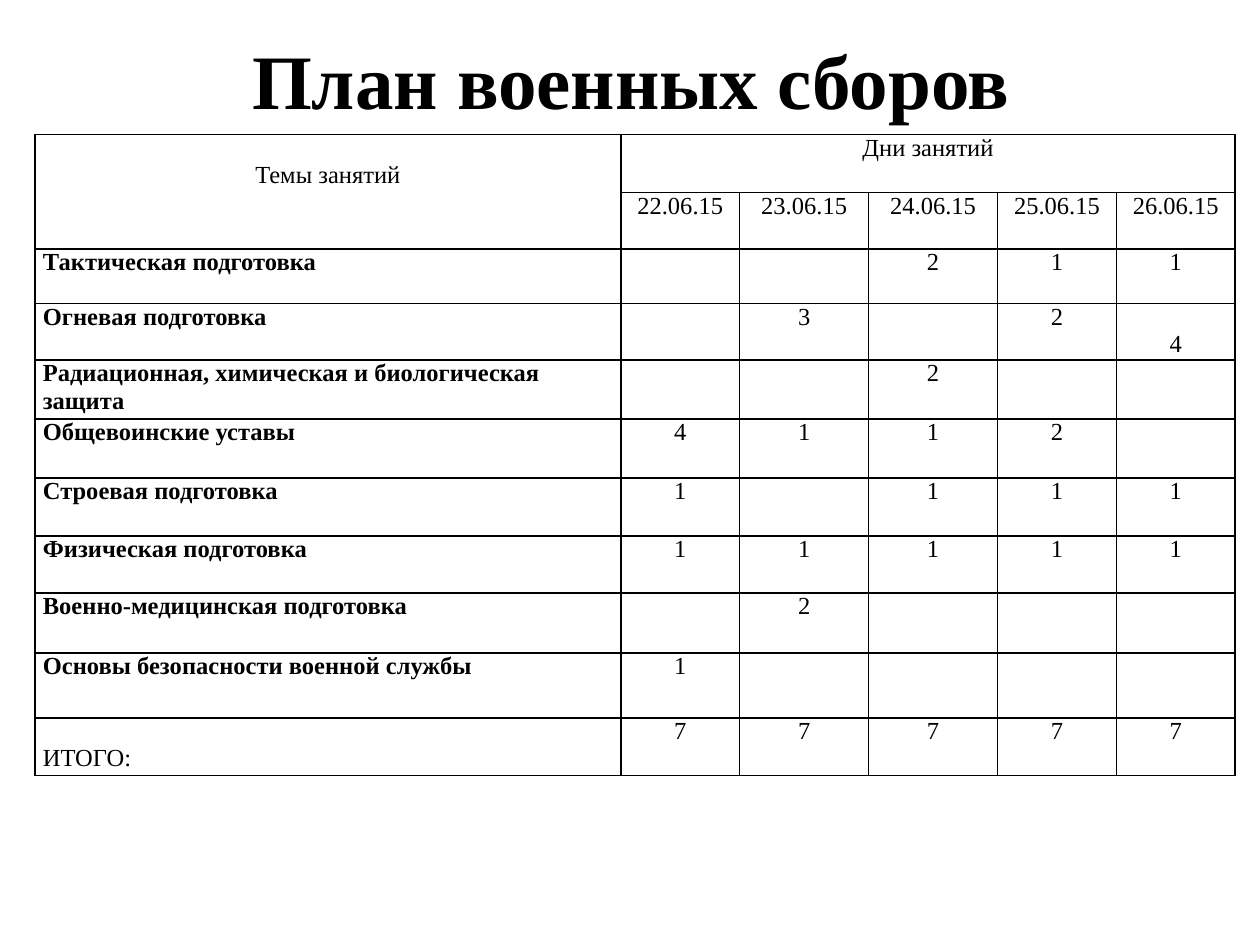
from pptx import Presentation
from pptx.dml.color import RGBColor
from pptx.enum.text import MSO_ANCHOR, PP_ALIGN
from pptx.oxml import parse_xml
from pptx.oxml.ns import nsdecls
from pptx.util import Pt

BLACK = RGBColor(0x00, 0x00, 0x00)
FONT = "Times New Roman"
LINE_HEIGHT = 15.5


def add_text(text_frame, text, size, bold, alignment):
    paragraph = text_frame.paragraphs[0]
    paragraph.alignment = alignment
    run = paragraph.add_run()
    run.text = text
    run.font.name = FONT
    run.font.size = Pt(size)
    run.font.bold = bold
    run.font.color.rgb = BLACK


def add_borders(cell):
    properties = cell._tc.get_or_add_tcPr()
    for index, side in enumerate(("lnL", "lnR", "lnT", "lnB")):
        properties.insert(index, parse_xml(
            f'<a:{side} {nsdecls("a")} w="{Pt(1)}"><a:solidFill>'
            f'<a:srgbClr val="{BLACK}"/></a:solidFill></a:{side}>'))


presentation = Presentation()
presentation.slide_width = Pt(720)
presentation.slide_height = Pt(540)
slide = presentation.slides.add_slide(presentation.slide_layouts[6])

# Title
title = slide.shapes.add_textbox(Pt(36.7), Pt(0), Pt(648), Pt(90))
title.text_frame.word_wrap = True
title.text_frame.vertical_anchor = MSO_ANCHOR.MIDDLE
add_text(title.text_frame, "План военных сборов", 44, True, PP_ALIGN.CENTER)

# Schedule: topic, then hours for each day
rows = [
    ("Темы занятий", "Дни занятий", "", "", "", ""),
    ("", "22.06.15", "23.06.15", "24.06.15", "25.06.15", "26.06.15"),
    ("Тактическая подготовка", "", "", "2", "1", "1"),
    ("Огневая подготовка", "", "3", "", "2", "4"),
    ("Радиационная, химическая и биологическая защита", "", "", "2", "", ""),
    ("Общевоинские уставы", "4", "1", "1", "2", ""),
    ("Строевая подготовка", "1", "", "1", "1", "1"),
    ("Физическая подготовка", "1", "1", "1", "1", "1"),
    ("Военно-медицинская подготовка", "", "2", "", "", ""),
    ("Основы безопасности военной службы", "1", "", "", "", ""),
    ("ИТОГО:", "7", "7", "7", "7", "7"),
]
column_widths = [334.8, 67.9, 73.7, 73.7, 67.9, 67.9]
row_heights = [33.1, 32.3, 31.1, 30.9, 32.6, 33.7, 33.1, 32.6, 34.3, 37.1, 33.1]
last_row = len(rows) - 1
second_line_cells = {(0, 0), (3, 5), (last_row, 0)}

# Table grid
frame = slide.shapes.add_table(len(rows), len(column_widths), Pt(20), Pt(77),
                               Pt(sum(column_widths)), Pt(sum(row_heights)))
table = frame.table
table.first_row = False
table.horz_banding = False
for column, width in zip(table.columns, column_widths):
    column.width = Pt(width)
for row, height in zip(table.rows, row_heights):
    row.height = Pt(height)
table.cell(0, 0).merge(table.cell(1, 0))
table.cell(0, 1).merge(table.cell(0, 5))

# Cell contents
for row_index, values in enumerate(rows):
    for column_index, value in enumerate(values):
        cell = table.cell(row_index, column_index)
        cell.fill.background()
        add_borders(cell)
        cell.margin_left = cell.margin_right = Pt(4.5)
        on_second_line = (row_index, column_index) in second_line_cells
        cell.margin_top = Pt(LINE_HEIGHT if on_second_line else 0)
        cell.margin_bottom = Pt(0)
        if value:
            is_topic = column_index == 0 and row_index > 1
            add_text(cell.text_frame, value, 14,
                     is_topic and row_index < last_row,
                     PP_ALIGN.LEFT if is_topic else PP_ALIGN.CENTER)

presentation.save("out.pptx")
